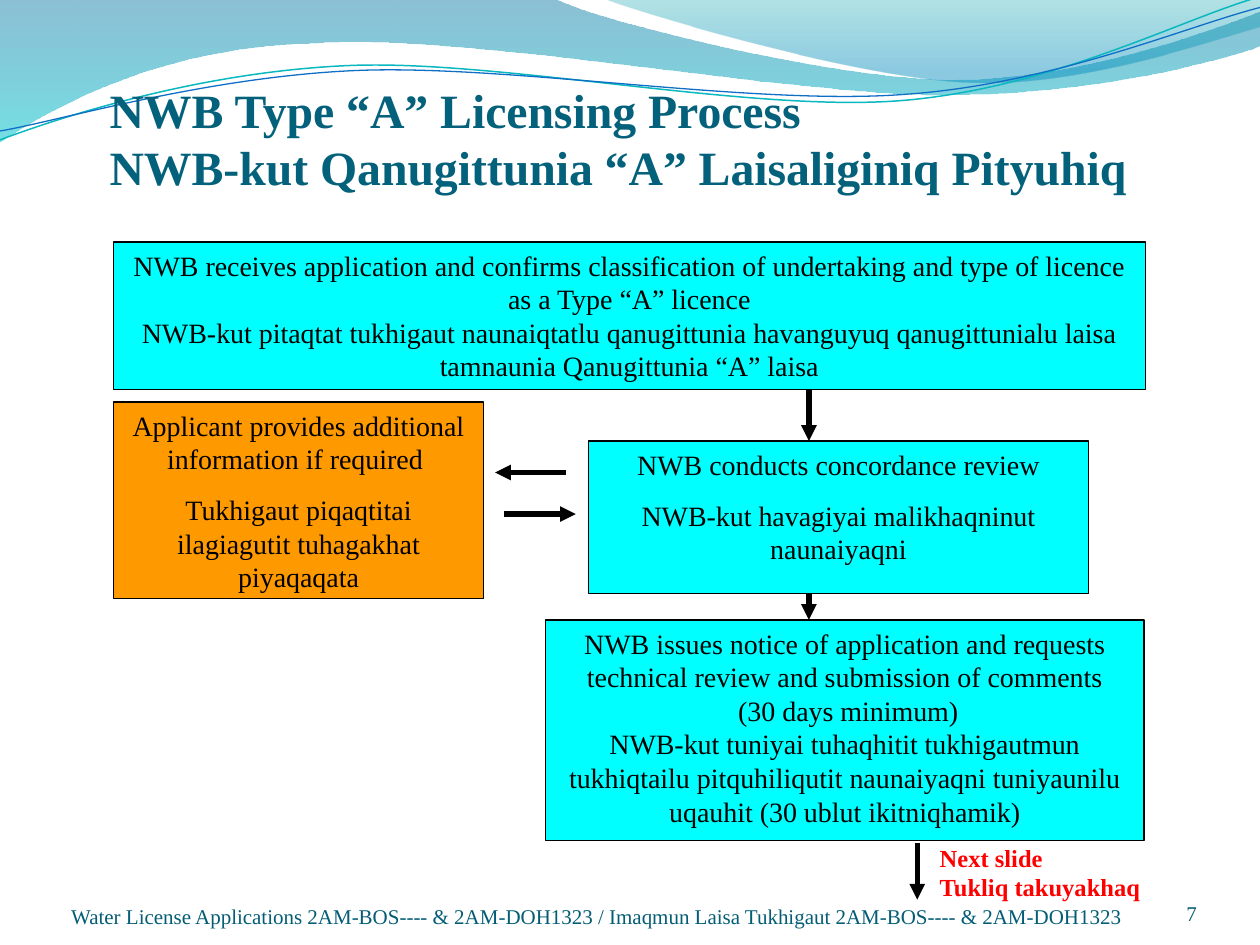
"""Build the Type "A" licensing process flowchart slide."""
from dataclasses import dataclass
from math import cos, radians, sin

from lxml.etree import SubElement
from pptx import Presentation
from pptx.dml.color import RGBColor
from pptx.enum.shapes import MSO_CONNECTOR, MSO_SHAPE
from pptx.enum.text import MSO_ANCHOR, PP_ALIGN
from pptx.oxml.ns import qn
from pptx.shapes.autoshape import Shape
from pptx.slide import Slide
from pptx.util import Inches, Pt

Point = tuple[float, float]


@dataclass(frozen=True)
class Theme:
    font: str = "Times New Roman"
    black: str = "000000"
    cyan: str = "00FFFF"
    orange: str = "FF9900"
    red: str = "FF0000"
    title: str = "04617B"
    footer: str = "045D75"
    title_size: float = 27.3
    body_size: float = 16
    label_size: float = 14
    footer_size: float = 12
    border: float = 0.75
    arrow: float = 3


THEME = Theme()


@dataclass(frozen=True)
class TextStyle:
    size: float
    color: str
    bold: bool = False
    align: PP_ALIGN = PP_ALIGN.LEFT
    space_after: float = 0


@dataclass(frozen=True)
class Step:
    left: float
    top: float
    width: float
    height: float
    fill: str
    paragraphs: tuple[str, ...]
    space_after: float = 0


@dataclass(frozen=True)
class Label:
    left: float
    top: float
    width: float
    height: float
    text: str
    style: TextStyle
    anchor: MSO_ANCHOR = MSO_ANCHOR.BOTTOM
    insets: tuple[float, float, float, float] = (0, 0, 0, 0)


@dataclass(frozen=True)
class GradientStop:
    position: float
    color: str
    opacity: int


@dataclass(frozen=True)
class Wave:
    start: Point
    segments: tuple[tuple[Point, ...], ...]
    stops: tuple[GradientStop, ...] = ()
    line: str = ""
    line_width: float = 0
    rotation: float = 0
    center: Point = (0, 0)


WAVES = (
    Wave((0, 0), (
        ((4.4, -0.01),),
        ((4.76, 0.17), (6.64, 0.63), (7.58, 0.63)),
        ((8.53, 0.63), (9.58, 0.26), (10, 0.09)),
        ((10.01, 0.36),),
        ((9.83, 0.44), (8.7, 0.76), (7.46, 0.75)),
        ((6.22, 0.75), (3.82, 0.28), (2.57, 0.34)),
        ((1.29, 0.36), (0.46, 0.83), (-0.01, 1.13)),
        ((0, 0),),
    ), (GradientStop(0, "0074A1", 45), GradientStop(1, "00C6CF", 55))),
    Wave((4.79, -0.01), (
        ((5.09, 0.11), (6.82, 0.62), (7.69, 0.65)),
        ((8.56, 0.69), (9.61, 0.32), (10, 0.21)),
        ((10, 0),),
        ((4.79, -0.01),),
    ), (GradientStop(0, "00A1A9", 30), GradientStop(0.8, "008BBF", 45))),
    Wave((0, 1.11), (
        ((0.48, 0.93), (1.58, 0.57), (2.77, 0.52)),
        ((3.95, 0.47), (5.93, 0.89), (7.13, 0.8)),
        ((8.33, 0.71), (9.38, 0.15), (9.98, -0.02)),
    ), line="0AB8BF", line_width=0.85, rotation=-2.7, center=(4.99, 0.58)),
    Wave((0, 1.04), (
        ((0.47, 0.96), (1.64, 0.61), (2.83, 0.56)),
        ((4.03, 0.51), (5.97, 0.84), (7.17, 0.75)),
        ((8.36, 0.67), (9.41, 0.21), (10, 0.06)),
    ), line="0F6FC6", line_width=0.75, rotation=-2.7, center=(5, 0.59)),
)

STEPS = (
    Step(0.9, 1.92, 8.19, 1.17, THEME.cyan, (
        "NWB receives application and confirms classification of undertaking and type of licence as a Type “A” licence",
        "NWB-kut pitaqtat tukhigaut naunaiqtatlu qanugittunia havanguyuq qanugittunialu laisa tamnaunia Qanugittunia “A” laisa",
    )),
    Step(4.67, 3.5, 3.97, 1.21, THEME.cyan, (
        "NWB conducts concordance review",
        "NWB-kut havagiyai malikhaqninut naunaiyaqni",
    ), 10),
    Step(0.9, 3.19, 2.94, 1.56, THEME.orange, (
        "Applicant provides additional information if required ",
        "Tukhigaut piqaqtitai ilagiagutit tuhagakhat piyaqaqata",
    ), 10),
    Step(4.33, 4.92, 4.75, 1.75, THEME.cyan, (
        "NWB issues notice of application and requests technical review and submission of comments",
        " (30 days minimum)",
        "NWB-kut tuniyai tuhaqhitit tukhigautmun tukhiqtailu pitquhiliqutit naunaiyaqni tuniyaunilu uqauhit (30 ublut ikitniqhamik)",
    )),
)

ARROWS = (
    ((6.42, 4.5), (6.42, 4.92)),
    ((6.42, 3.08), (6.42, 3.5)),
    ((4, 4.08), (4.57, 4.08)),
    ((7.28, 6.69), (7.28, 7.14)),
    ((4.49, 3.75), (3.93, 3.75)),
)

LABELS = (
    Label(8.67, 6.95, 0.83, 0.4, "7",
          TextStyle(THEME.footer_size, THEME.footer, align=PP_ALIGN.RIGHT)),
    Label(7.36, 6.64, 2.05, 0.57, "Next slide\nTukliq takuyakhaq",
          TextStyle(THEME.label_size, THEME.red, True), MSO_ANCHOR.TOP, (0.1, 0.05, 0.1, 0.05)),
    Label(0.87, 0.3, 8.54, 1.25,
          "NWB Type “A” Licensing Process\vNWB-kut Qanugittunia “A” Laisaliginiq Pityuhiq",
          TextStyle(THEME.title_size, THEME.title, True), insets=(0, 0.05, 0, 0)),
    Label(0.43, 6.82, 8.66, 0.55,
          "Water License Applications 2AM-BOS---- & 2AM-DOH1323 / Imaqmun Laisa Tukhigaut 2AM-BOS---- & 2AM-DOH1323 ",
          TextStyle(THEME.footer_size, THEME.footer, align=PP_ALIGN.CENTER)),
)


def write_text(shape: Shape, text: str, style: TextStyle) -> None:
    """Set the text of a shape and format every paragraph and run."""
    shape.text_frame.word_wrap = True
    shape.text_frame.text = text
    for paragraph in shape.text_frame.paragraphs:
        paragraph.alignment = style.align
        paragraph.space_after = Pt(style.space_after)
        for run in paragraph.runs:
            run.font.name = THEME.font
            run.font.size = Pt(style.size)
            run.font.bold = style.bold
            run.font.color.rgb = RGBColor.from_string(style.color)


def unrotate(point: Point, wave: Wave) -> tuple[Inches, Inches]:
    """Return a point of a wave as it lies before the wave is rotated."""
    angle = radians(-wave.rotation)
    x, y = point[0] - wave.center[0], point[1] - wave.center[1]
    return (Inches(wave.center[0] + x * cos(angle) - y * sin(angle)),
            Inches(wave.center[1] + x * sin(angle) + y * cos(angle)))


def curve_segments(shape: Shape, wave: Wave) -> None:
    """Join each three line points of a curved segment into one cubic curve."""
    lines = iter(list(shape.element.spPr.iter(qn("a:lnTo"))))
    for segment in wave.segments:
        group = [next(lines) for _ in segment]
        if len(group) == 3:
            group[0].tag = qn("a:cubicBezTo")
            for line in group[1:]:
                group[0].append(line[0])
                line.getparent().remove(line)


def draw_wave(slide: Slide, wave: Wave) -> None:
    """Draw a gradient band or a thin curve of the header."""
    builder = slide.shapes.build_freeform(*unrotate(wave.start, wave))
    points = [unrotate(point, wave) for segment in wave.segments for point in segment]
    builder.add_line_segments(points, close=bool(wave.stops))
    shape = builder.convert_to_shape()
    curve_segments(shape, wave)
    shape.rotation = wave.rotation
    shape.shadow.inherit = False
    if not wave.stops:
        shape.fill.background()
        shape.line.color.rgb = RGBColor.from_string(wave.line)
        shape.line.width = Pt(wave.line_width)
        return
    shape.line.fill.background()
    shape.fill.gradient()
    shape.fill.gradient_angle = 270
    for target, stop in zip(shape.fill.gradient_stops, wave.stops):
        target.position = stop.position
        target.color.rgb = RGBColor.from_string(stop.color)
    for color, stop in zip(shape.element.spPr.iter(qn("a:srgbClr")), wave.stops):
        SubElement(color, qn("a:alpha"), val=str(stop.opacity * 1000))


def draw_step(slide: Slide, step: Step) -> None:
    """Draw a bordered process box with centred text."""
    bounds = map(Inches, (step.left, step.top, step.width, step.height))
    shape = slide.shapes.add_shape(MSO_SHAPE.RECTANGLE, *bounds)
    shape.shadow.inherit = False
    shape.fill.solid()
    shape.fill.fore_color.rgb = RGBColor.from_string(step.fill)
    shape.line.color.rgb = RGBColor.from_string(THEME.black)
    shape.line.width = Pt(THEME.border)
    shape.text_frame.vertical_anchor = MSO_ANCHOR.TOP
    style = TextStyle(THEME.body_size, THEME.black, align=PP_ALIGN.CENTER, space_after=step.space_after)
    write_text(shape, "\n".join(step.paragraphs), style)


def draw_arrow(slide: Slide, start: Point, end: Point) -> None:
    """Draw a straight arrow with a triangular head at its end."""
    connector = slide.shapes.add_connector(MSO_CONNECTOR.STRAIGHT, *map(Inches, (*start, *end)))
    connector.line.color.rgb = RGBColor.from_string(THEME.black)
    connector.line.width = Pt(THEME.arrow)
    SubElement(connector.line._get_or_add_ln(), qn("a:tailEnd"), type="triangle")
    SubElement(connector._element.spPr, qn("a:effectLst"))


def draw_label(slide: Slide, label: Label) -> None:
    """Draw a free text box."""
    bounds = map(Inches, (label.left, label.top, label.width, label.height))
    shape = slide.shapes.add_textbox(*bounds)
    frame = shape.text_frame
    frame.vertical_anchor = label.anchor
    frame.margin_left, frame.margin_top, frame.margin_right, frame.margin_bottom = map(Inches, label.insets)
    write_text(shape, label.text, label.style)


def main() -> None:
    """Build and save the presentation."""
    presentation = Presentation()
    presentation.slide_width, presentation.slide_height = Inches(10), Inches(7.5)
    slide = presentation.slides.add_slide(presentation.slide_layouts[6])
    for wave in WAVES:
        draw_wave(slide, wave)
    for start, end in ARROWS:
        draw_arrow(slide, start, end)
    for step in STEPS:
        draw_step(slide, step)
    for label in LABELS:
        draw_label(slide, label)
    presentation.save("out.pptx")


if __name__ == "__main__":
    main()
